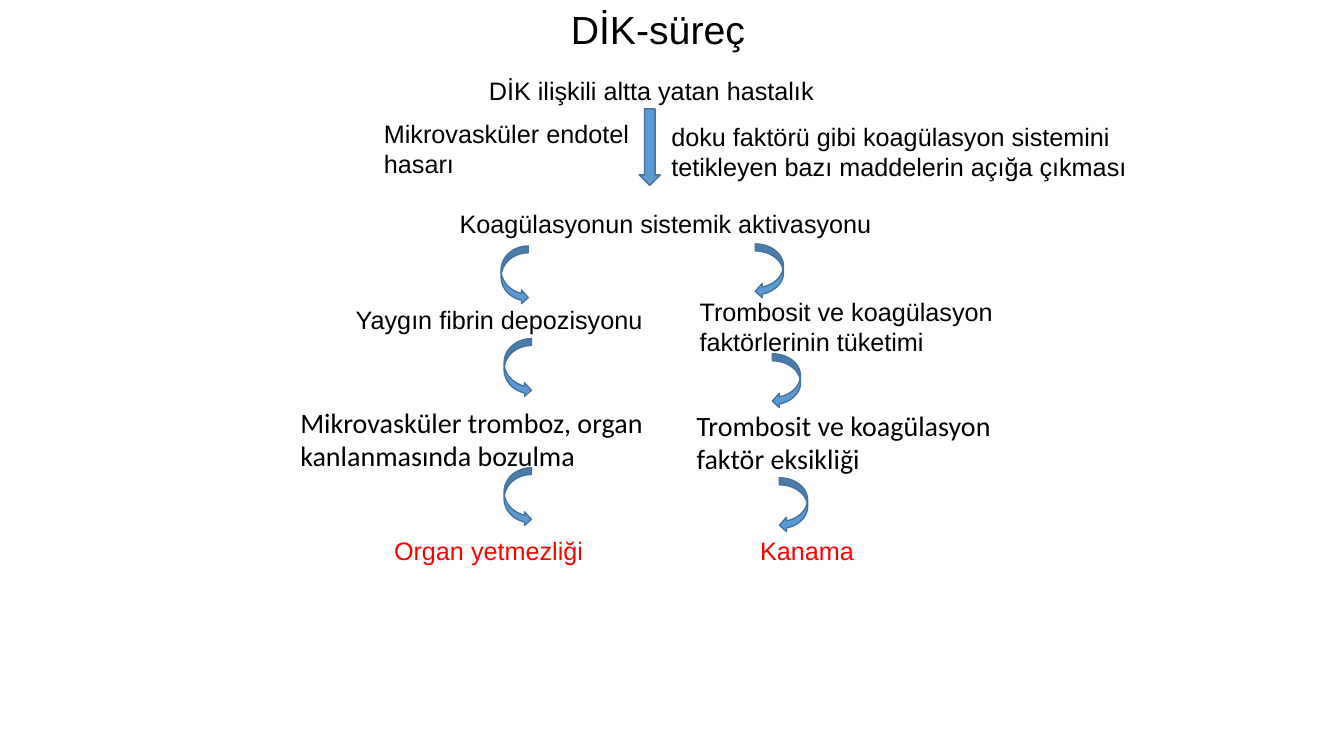
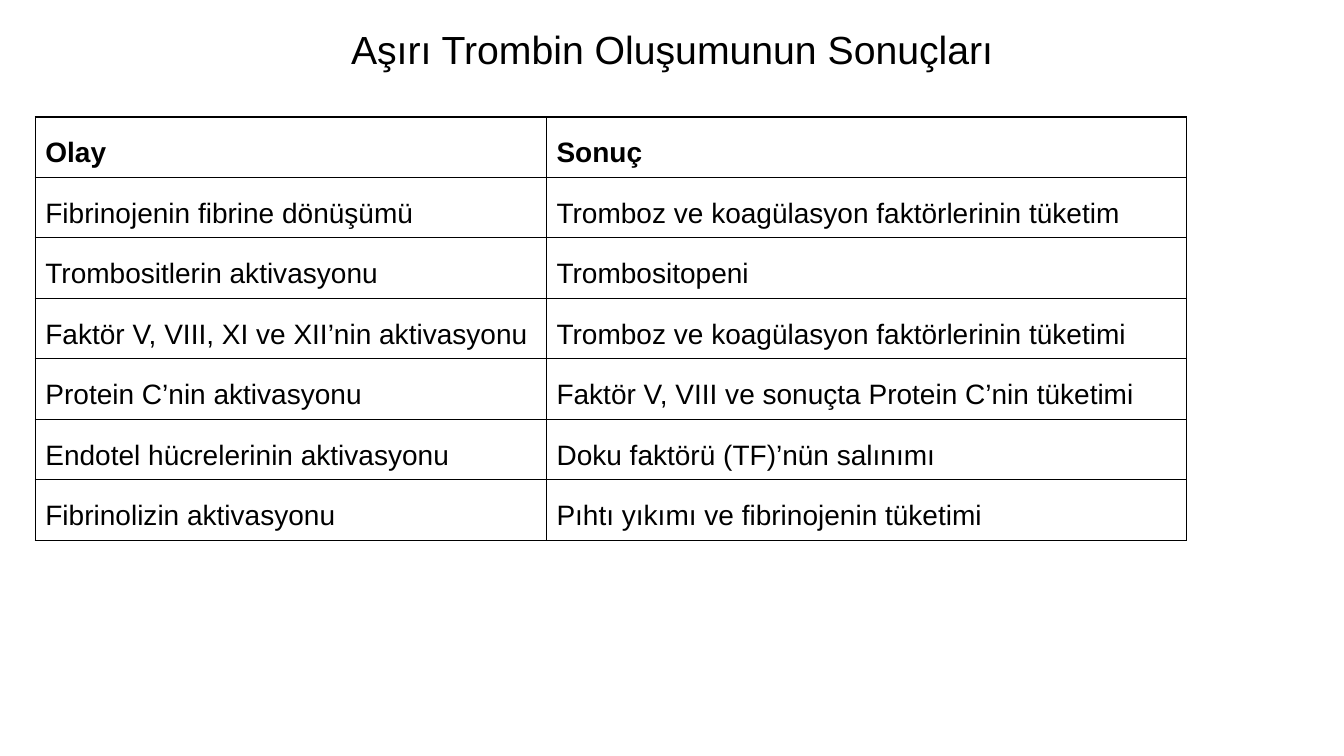
"""Build two slides on the course of DIC and the results of excess thrombin."""
from lxml import etree
from pptx import Presentation
from pptx import util as u
from pptx.dml.color import RGBColor
from pptx.enum import shapes, text
from pptx.oxml.ns import qn

PX = 9144
BLACK, RED, BLUE, EDGE = "000000", "FF0000", "5B9BD5", "43739E"
KIND = shapes.MSO_SHAPE


def paint(font, size, color=BLACK, name="Arial", bold=False):
    font.size, font.name, font.bold = u.Pt(size), name, bold
    font.color.rgb = RGBColor.from_string(color)


def start(title, x, y, w):
    slide = deck.slides.add_slide(deck.slide_layouts[5])
    head = slide.shapes.title
    head.left, head.top, head.width, head.height = [n * PX for n in (x, y, w, 57)]
    frame = head.text_frame
    frame.text = title
    frame.auto_size = text.MSO_AUTO_SIZE.NONE
    frame.vertical_anchor = text.MSO_ANCHOR.TOP
    para = frame.paragraphs[0]
    para.alignment = text.PP_ALIGN.CENTER
    paint(para.font, 28)
    return slide


deck = Presentation()
deck.slide_width, deck.slide_height = 1333 * PX, 750 * PX

flow = start("DİK-süreç", 20, 0, 1265)

notes = [
    ("DİK ilişkili altta yatan hastalık", 475, 70, 411, 40),
    ("Koagülasyonun sistemik aktivasyonu", 446, 202, 469, 40),
    ("Yaygın fibrin depozisyonu", 343, 297, 387, 40),
    ("Trombosit ve koagülasyon\nfaktörlerinin tüketimi", 684, 289, 415, 71),
    ("doku faktörü gibi koagülasyon sistemini tetikleyen bazı maddelerin açığa çıkması",
     656, 115, 523, 71),
    ("Mikrovasküler endotel hasarı", 371, 112, 283, 71),
]
lacks = [
    ("Mikrovasküler tromboz, organ kanlanmasında bozulma", 288, 397, 397, 77),
    ("Trombosit ve koagülasyon faktör eksikliği", 681, 400, 332, 77),
]
ends = [("Organ yetmezliği", 381, 526, 210, 40), ("Kanama", 744, 526, 114, 40)]

for group, size, color, name, wrap in [
    (notes, 18, BLACK, "Arial", True),
    (lacks, 20, BLACK, "Calibri", True),
    (ends, 18, RED, "Arial", False),
]:
    for words, *place in group:
        frame = flow.shapes.add_textbox(*[n * PX for n in place]).text_frame
        frame.word_wrap = wrap
        frame.text = words
        for para in frame.paragraphs:
            paint(para.font, size, color, name)

arrows = [(KIND.DOWN_ARROW, 634, 108, 21, 76)]
for x, y in [(497, 244), (500, 336), (500, 464)]:
    arrows.append((KIND.CURVED_RIGHT_ARROW, x, y, 27, 58))
for x, y in [(749, 242), (766, 351), (773, 474)]:
    arrows.append((KIND.CURVED_LEFT_ARROW, x, y, 28, 54))

for kind, *place in arrows:
    arrow = flow.shapes.add_shape(kind, *[n * PX for n in place])
    arrow.shadow.inherit = False
    arrow.fill.solid()
    arrow.fill.fore_color.rgb = RGBColor.from_string(BLUE)
    arrow.line.color.rgb = RGBColor.from_string(EDGE)
    arrow.line.width = u.Pt(1)

sums = start("Aşırı Trombin Oluşumunun Sonuçları", 35, 20, 1263)

rows = [
    ("Olay", "Sonuç"),
    ("Fibrinojenin fibrine dönüşümü", "Tromboz ve koagülasyon faktörlerinin tüketim"),
    ("Trombositlerin aktivasyonu", "Trombositopeni"),
    ("Faktör V, VIII, XI ve XII’nin aktivasyonu",
     "Tromboz ve koagülasyon faktörlerinin tüketimi"),
    ("Protein C’nin aktivasyonu", "Faktör V, VIII ve sonuçta Protein C’nin tüketimi"),
    ("Endotel hücrelerinin aktivasyonu", "Doku faktörü (TF)’nün salınımı"),
    ("Fibrinolizin aktivasyonu", "Pıhtı yıkımı ve fibrinojenin tüketimi"),
]
widths = [507, 635]
high = 60
grid = sums.shapes.add_table(
    len(rows), len(widths), 35 * PX, 116 * PX, sum(widths) * PX, len(rows) * high * PX
).table
grid.first_row = grid.horz_banding = False
for col, width in zip(grid.columns, widths):
    col.width = width * PX

for r, row in enumerate(rows):
    for c, words in enumerate(row):
        cell = grid.cell(r, c)
        cell.text = words
        cell.fill.background()
        para = cell.text_frame.paragraphs[0]
        para.line_spacing = 1.5
        paint(para.font, 20, bold=r == 0)
        props = cell._tc.get_or_add_tcPr()
        for i, side in enumerate("LRTB"):
            line = etree.Element(qn(f"a:ln{side}"), w=str(u.Pt(1)))
            fill = etree.SubElement(line, qn("a:solidFill"))
            etree.SubElement(fill, qn("a:srgbClr"), val=BLACK)
            props.insert(i, line)

deck.save("out.pptx")
